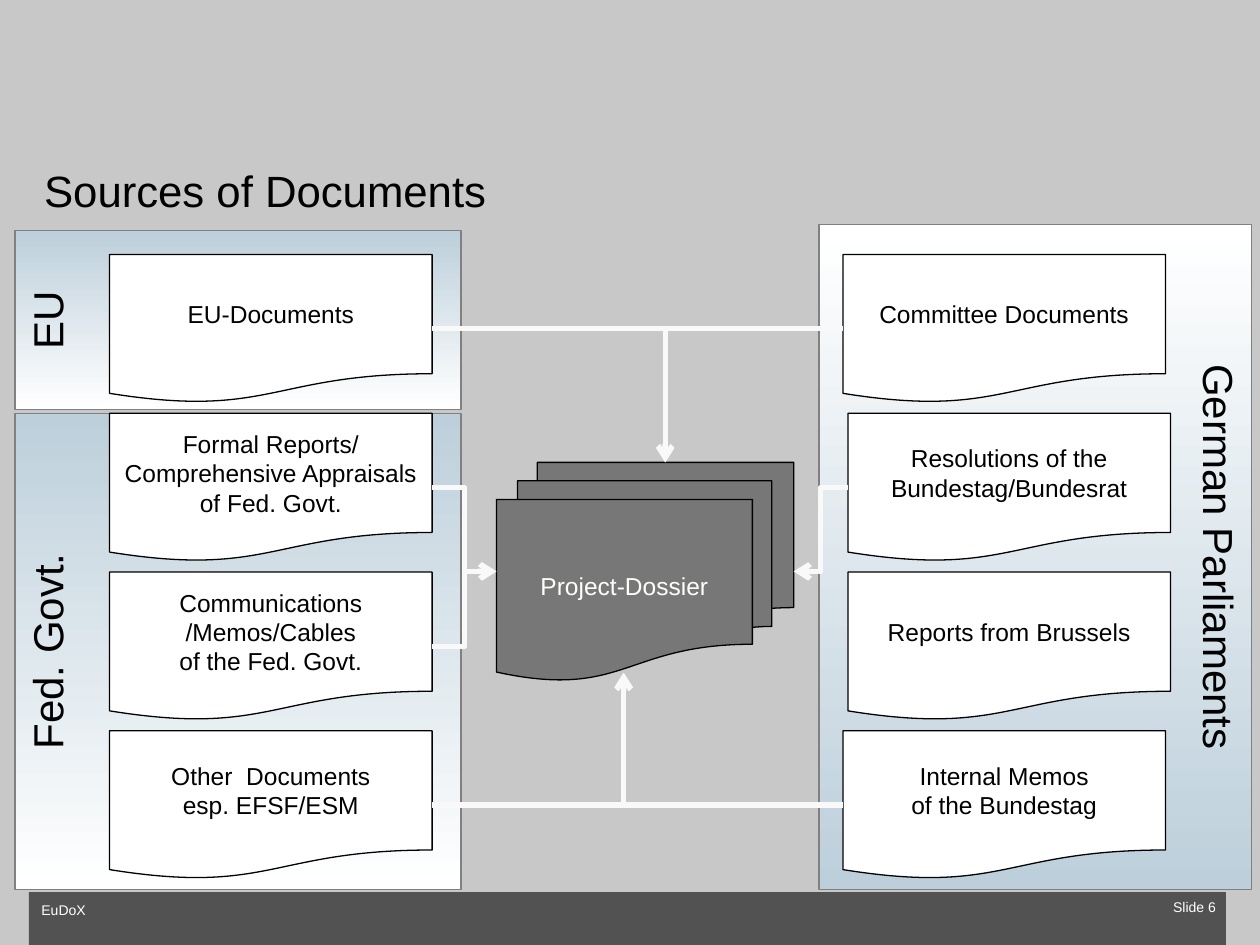
from lxml import etree
from pptx import Presentation
from pptx.dml.color import RGBColor
from pptx.enum import shapes, text
from pptx.oxml import ns
from pptx.util import Inches, Pt

# Content: panels as (label, left, top, width, height, rotation)
TITLE = "Sources of Documents"
PANELS = [
    ("German Parliaments", 6.5, 1.78, 3.43, 5.28, 180),
    ("Fed. Govt.", 0.12, 3.28, 3.54, 3.78, 0),
    ("EU", 0.12, 1.83, 3.54, 1.42, 0),
]
LEFT_DOCUMENTS = [
    "EU-Documents",
    "Formal Reports/\vComprehensive Appraisals\vof Fed. Govt.",
    "Communications\v/Memos/Cables\vof the Fed. Govt.",
    "Other  Documents\vesp. EFSF/ESM",
]
# Right column: (text, left)
RIGHT_DOCUMENTS = [
    ("Committee Documents", 6.69),
    ("Resolutions of the\vBundestag/Bundesrat", 6.73),
    ("Reports from Brussels", 6.73),
    ("Internal Memos\vof the Bundestag", 6.69),
]
DOSSIER = ("Project-Dossier", 3.94, 3.67, 2.36, 1.73)
# Footer: (text, left, top, width, height, alignment)
FOOTER = [
    ("EuDoX", 0.23, 7.11, 4.41, 0.23, text.PP_ALIGN.LEFT),
    ("Slide 6", 9, 7.08, 0.75, 0.24, text.PP_ALIGN.RIGHT),
]

# Document grid
LEFT_X, ROW_TOP, ROW_STEP = 0.87, 2.02, 1.26
DOCUMENT_WIDTH, DOCUMENT_HEIGHT = 2.56, 1.18
LEFT_EDGE = LEFT_X + DOCUMENT_WIDTH
ROW_TOPS = [ROW_TOP + ROW_STEP * row for row in range(4)]
ROW_MIDDLES = [top + DOCUMENT_HEIGHT / 2 for top in ROW_TOPS]


def color(value):
    return RGBColor.from_string(value)


def write(shape, content, size, ink, align=text.PP_ALIGN.CENTER,
          anchor=text.MSO_ANCHOR.MIDDLE, wrap=False):
    frame = shape.text_frame
    frame.text = content
    frame.word_wrap = wrap
    frame.vertical_anchor = anchor
    paragraph = frame.paragraphs[0]
    paragraph.alignment = align
    for name, value in {"name": "Arial", "size": Pt(size), "bold": False}.items():
        setattr(paragraph.font, name, value)
    paragraph.font.color.rgb = color(ink)


def add_box(slide, kind, box, fill=None, line=None):
    shape = slide.shapes.add_shape(kind, *map(Inches, box))
    shape.shadow.inherit = False
    if fill:
        shape.fill.solid()
        shape.fill.fore_color.rgb = color(fill)
    if line:
        shape.line.color.rgb = color(line)
        shape.line.width = Pt(0.75)
    else:
        shape.line.fill.background()
    return shape


def add_panel(slide, label, left, top, width, height, rotation):
    panel = add_box(slide, shapes.MSO_SHAPE.RECTANGLE,
                    (left, top, width, height), line="808080")
    panel.rotation = rotation
    panel.fill.gradient()
    panel.fill.gradient_angle = 270
    for stop, value in zip(panel.fill.gradient_stops, ("BDCFDB", "FFFFFF")):
        stop.color.rgb = color(value)
    write(panel, label, 24, "000000", anchor=text.MSO_ANCHOR.TOP)
    panel.text_frame._txBody.bodyPr.set("vert", "vert270")


def add_document(slide, content, left, top):
    document = add_box(slide, shapes.MSO_SHAPE.FLOWCHART_DOCUMENT,
                       (left, top, DOCUMENT_WIDTH, DOCUMENT_HEIGHT),
                       "FFFFFF", "000000")
    write(document, content, 14, "000000")


def add_arrow(slide, preset, *ends):
    arrow = slide.shapes.add_connector(shapes.MSO_CONNECTOR.ELBOW, *map(Inches, ends))
    arrow.line.color.rgb = color("F9F9F9")
    arrow.line.width = Pt(3)
    properties = arrow._element.spPr
    properties.find(ns.qn("a:prstGeom")).set("prst", preset)
    etree.SubElement(arrow.line._get_or_add_ln(), ns.qn("a:tailEnd"), type="arrow")
    etree.SubElement(properties, ns.qn("a:effectLst"))


def main():
    presentation = Presentation()
    presentation.slide_width, presentation.slide_height = Inches(10), Inches(7.5)
    slide = presentation.slides.add_slide(presentation.slide_layouts[5])
    slide.background.fill.solid()
    slide.background.fill.fore_color.rgb = color("C8C8C8")

    # Footer bar and panels
    add_box(slide, shapes.MSO_SHAPE.RECTANGLE, (0.23, 7.08, 9.5, 0.42), "525252")
    for panel in PANELS:
        add_panel(slide, *panel)

    # Title and footer text
    title = slide.shapes.title
    for name, value in {"left": 0.25, "top": 1.25, "width": 9.5, "height": 0.86}.items():
        setattr(title, name, Inches(value))
    write(title, TITLE, 25, "000000", text.PP_ALIGN.LEFT, text.MSO_ANCHOR.TOP, True)
    for content, *box, align in FOOTER:
        footer = slide.shapes.add_textbox(*map(Inches, box))
        write(footer, content, 8, "FFFFFF", align, wrap=True)

    # Dossier and documents
    label, *box = DOSSIER
    dossier = add_box(slide, shapes.MSO_SHAPE.FLOWCHART_MULTIDOCUMENT, box,
                      "777777", "000000")
    write(dossier, label, 14, "FFFEFB")
    for content, top in zip(LEFT_DOCUMENTS, ROW_TOPS):
        add_document(slide, content, LEFT_X, top)
    for (content, left), top in zip(RIGHT_DOCUMENTS, ROW_TOPS):
        add_document(slide, content, left, top)

    # Arrows from the outer rows to the top and bottom of the dossier
    for row, x, y in ((0, 5.28, 3.67), (3, 4.95, 5.34)):
        for start in (LEFT_EDGE, RIGHT_DOCUMENTS[row][1]):
            add_arrow(slide, "bentConnector2", start, ROW_MIDDLES[row], x, y)

    # Arrows from the middle rows to the sides of the dossier
    dossier_left, dossier_top, dossier_width, dossier_height = box
    middle = dossier_top + dossier_height / 2
    for row, start, end in (
        (1, LEFT_EDGE, dossier_left),
        (2, LEFT_EDGE, dossier_left),
        (1, RIGHT_DOCUMENTS[1][1], dossier_left + dossier_width),
    ):
        add_arrow(slide, "bentConnector3", start, ROW_MIDDLES[row], end, middle)

    presentation.save("out.pptx")


if __name__ == "__main__":
    main()
